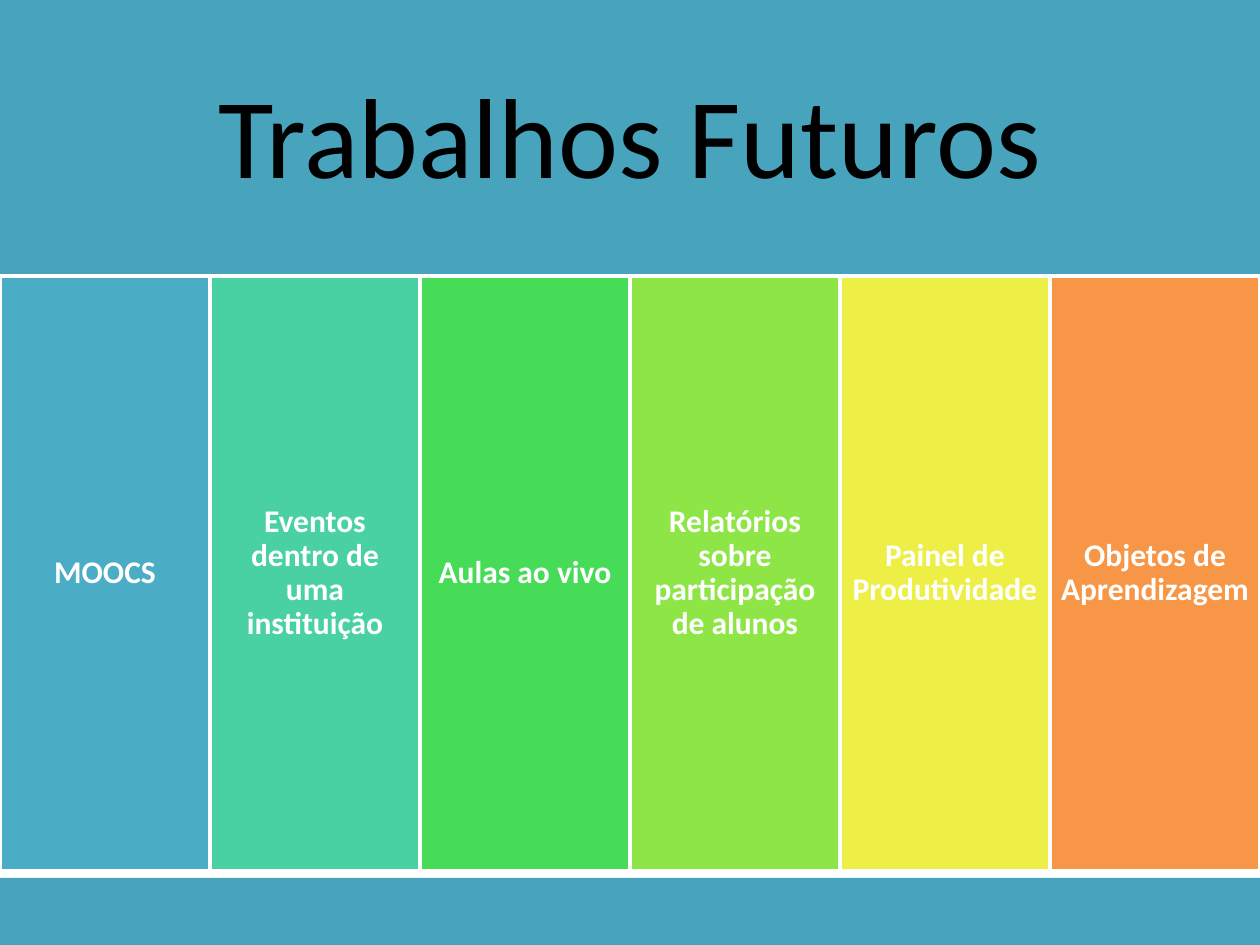
import pptx
import pptx.dml.color
import pptx.enum.shapes
import pptx.enum.text
import pptx.util

Cm = pptx.util.Cm
Pt = pptx.util.Pt
RGB = pptx.dml.color.RGBColor

BLACK = RGB(0x00, 0x00, 0x00)
WHITE = RGB(0xFF, 0xFF, 0xFF)
TEAL = RGB(0x48, 0xA4, 0xBD)
BLUE = RGB(0x4B, 0xAC, 0xC6)
MINT = RGB(0x49, 0xD1, 0xA3)
GREEN = RGB(0x47, 0xDC, 0x57)
LIME = RGB(0x8D, 0xE6, 0x46)
YELLOW = RGB(0xEE, 0xEF, 0x46)
ORANGE = RGB(0xF7, 0x96, 0x46)

WIDE, HIGH = 25.4, 19.05
WORKS = [
    ("MOOCS", BLUE),
    ("Eventos dentro de uma instituição", MINT),
    ("Aulas ao vivo", GREEN),
    ("Relatórios sobre participação de alunos", LIME),
    ("Painel de Produtividade", YELLOW),
    ("Objetos de Aprendizagem", ORANGE),
]


def add_block(slide, box, fill):
    block = slide.shapes.add_shape(
        pptx.enum.shapes.MSO_SHAPE.RECTANGLE, *(Cm(side) for side in box))
    block.shadow.inherit = False
    block.fill.solid()
    block.fill.fore_color.rgb = fill
    block.line.fill.background()
    return block


def set_text(block, text, size, color, bold, inset):
    frame = block.text_frame
    frame.text = text
    frame.word_wrap = True
    frame.vertical_anchor = pptx.enum.text.MSO_ANCHOR.MIDDLE
    frame.margin_left = frame.margin_right = Cm(inset)
    frame.margin_top = frame.margin_bottom = Cm(inset)
    para = frame.paragraphs[0]
    para.alignment = pptx.enum.text.PP_ALIGN.CENTER
    para.line_spacing = 0.9
    font = para.runs[0].font
    font.name = "Calibri"
    font.size = Pt(size)
    font.bold = bold
    font.color.rgb = color


def add_title(slide, box):
    block = add_block(slide, box, TEAL)
    set_text(block, "Trabalhos Futuros", 65, BLACK, False, 0.69)


def add_works(slide, box):
    left, top, width, height = box
    step = width / len(WORKS)
    for index, (text, fill) in enumerate(WORKS):
        block = add_block(slide, (left + index * step, top, step, height), fill)
        block.line.color.rgb = WHITE
        block.line.width = Pt(2)
        set_text(block, text, 18, WHITE, True, 0.18)


def add_foot(slide, box):
    add_block(slide, box, TEAL)


def main():
    deck = pptx.Presentation()
    deck.slide_width = Cm(WIDE)
    deck.slide_height = Cm(HIGH)
    slide = deck.slides.add_slide(deck.slide_layouts[6])
    add_title(slide, (0, 0, WIDE, 5.72))
    add_works(slide, (0, 5.56, WIDE, 11.99))
    add_foot(slide, (0, 17.7, WIDE, HIGH - 17.7))
    deck.save("out.pptx")


if __name__ == "__main__":
    main()
